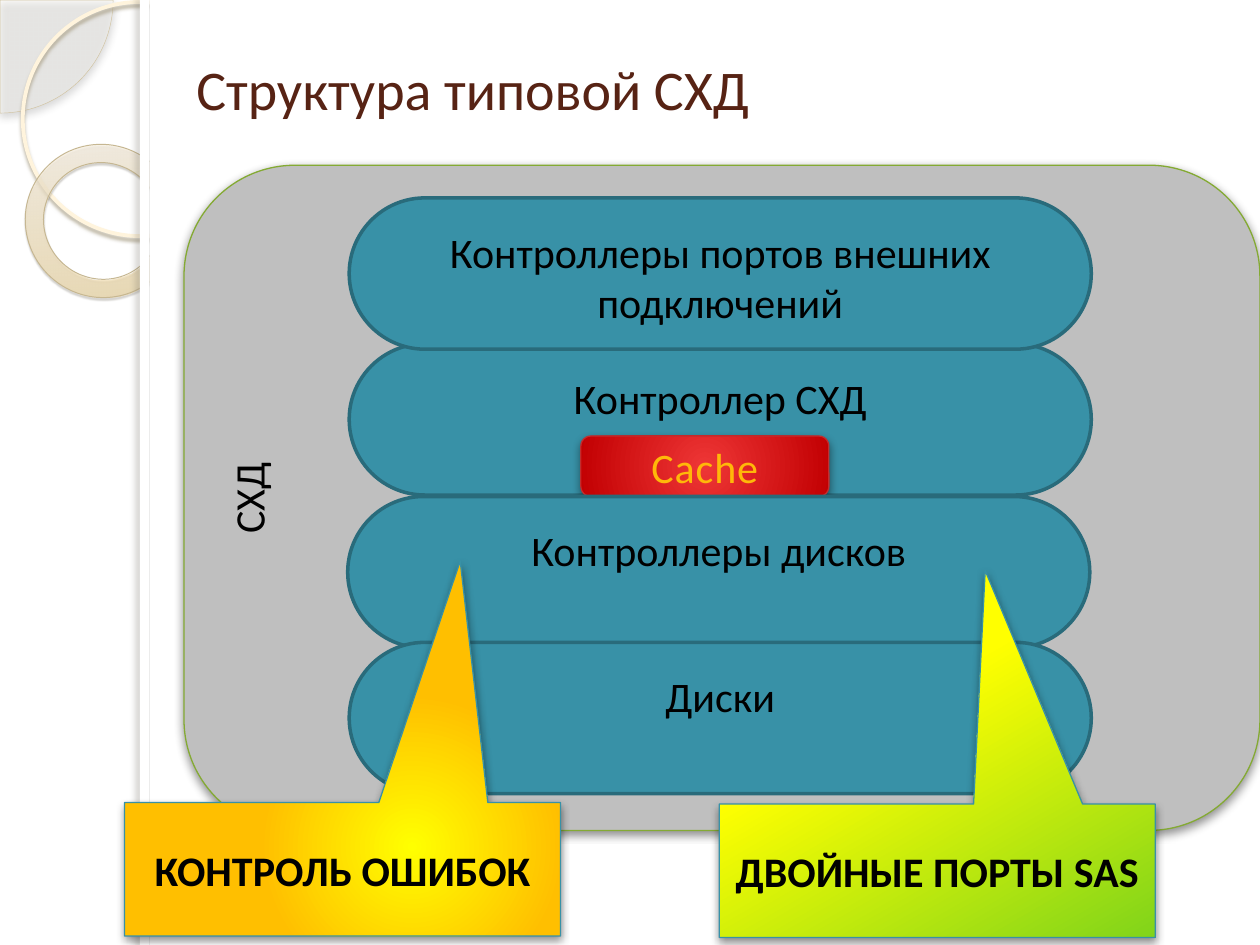
import dataclasses

import pptx
import pptx.dml.color
import pptx.enum.shapes
import pptx.enum.text
import pptx.oxml
import pptx.oxml.ns
import pptx.util

Cm = pptx.util.Cm
Pt = pptx.util.Pt
RGBColor = pptx.dml.color.RGBColor
Shape = pptx.enum.shapes.MSO_SHAPE
Anchor = pptx.enum.text.MSO_ANCHOR
Align = pptx.enum.text.PP_ALIGN
qn = pptx.oxml.ns.qn
parse_xml = pptx.oxml.parse_xml


@dataclasses.dataclass(frozen=True)
class Theme:
    font: str = "Calibri"
    title_size: int = 32
    label_size: int = 24
    title: str = "572314"
    text: str = "000000"
    cache_text: str = "FFB809"
    white: str = "FFFFFF"
    panel: str = "BFBFBF"
    panel_line: str = "84AA33"
    teal: str = "3891A7"
    teal_line: str = "296B7B"
    cache_line: str = "C32D2E"
    pie: str = "FCFAF4"
    pie_line: str = "D1C3A0"
    ring_line: str = "FFF4DD"
    donut_line: str = "C6B792"
    donut: tuple = ((0, "EED18E", 60), (100, "FEFAF6", 70))
    cache: tuple = ((0, "EE3636", 100), (100, "C20002", 100))
    amber: tuple = ((0, "FFFF00", 100), (67, "FFBF00", 100))
    lime: tuple = ((0, "FFFF00", 100), (100, "81D41A", 100))
    shadow: tuple = ("000000", 43, 5, 2, 90)
    ring_shadow: tuple = ("AFA68F", 85, 2, 2, 90)
    donut_shadow: tuple = ("595343", 35, 1, 1.2, 76)
    strip_shadow: tuple = ("736E62", 25, 3, 3, 180)


theme = Theme()
presentation = pptx.Presentation()
presentation.slide_width = Cm(25.4)
presentation.slide_height = Cm(19.05)
slide = presentation.slides.add_slide(presentation.slide_layouts[6])


def add_box(kind, box, fill=None, alpha=100, angle=None, focus=None, line=None,
            width=0.75, shadow=None, adjustments=(), rotation=0):
    shape = slide.shapes.add_shape(kind, *(Cm(length) for length in box))
    shape.rotation = rotation
    for index, value in enumerate(adjustments):
        shape.adjustments[index] = value
    shape.fill.background()
    if line:
        shape.line.color.rgb = RGBColor.from_string(line)
        shape.line.width = Pt(width)
    else:
        shape.line.fill.background()
    shape.shadow.inherit = False
    properties = shape._element.spPr
    namespace = pptx.oxml.ns.nsdecls("a")
    color_xml = '<a:srgbClr val="{}"><a:alpha val="{}"/></a:srgbClr>'
    if fill:
        if isinstance(fill, str):
            xml = f"<a:solidFill {namespace}>{color_xml.format(fill, alpha * 1000)}</a:solidFill>"
        else:
            stops = "".join(
                f'<a:gs pos="{position * 1000}">{color_xml.format(color, opacity * 1000)}</a:gs>'
                for position, color, opacity in fill)
            if focus:
                sides = " ".join(f'{side}="{value * 1000}"' for side, value in zip("ltrb", focus))
                direction = f'<a:path path="circle"><a:fillToRect {sides}/></a:path>'
            else:
                direction = f'<a:lin ang="{angle * 60000}" scaled="0"/>'
            xml = (f'<a:gradFill {namespace} rotWithShape="1"><a:gsLst>{stops}</a:gsLst>'
                   f"{direction}</a:gradFill>")
        properties.replace(properties.find(qn("a:noFill")), parse_xml(xml))
    if shadow:
        color, opacity, blur, distance, bearing = shadow
        properties.find(qn("a:effectLst")).append(parse_xml(
            f'<a:outerShdw {namespace} blurRad="{Pt(blur)}" dist="{Pt(distance)}" '
            f'dir="{bearing * 60000}" algn="ctr" rotWithShape="0">'
            f"{color_xml.format(color, opacity * 1000)}</a:outerShdw>"))
    return shape


def write_text(shape, text, color=theme.text, size=theme.label_size, bold=False,
               anchor=Anchor.TOP, align=Align.CENTER):
    frame = shape.text_frame
    frame.word_wrap = True
    frame.vertical_anchor = anchor
    paragraph = frame.paragraphs[0]
    paragraph.alignment = align
    run = paragraph.add_run()
    run.text = text
    run.font.name = theme.font
    run.font.size = Pt(size)
    run.font.bold = bold
    run.font.color.rgb = RGBColor.from_string(color)
    return run


add_box(Shape.PIE, (-2.27, -2.27, 4.55, 4.55), theme.pie, alpha=33, line=theme.pie_line,
        width=0.25, shadow=theme.shadow, adjustments=(0, 54.02))
add_box(Shape.OVAL, (0.46, 0.04, 4.72, 4.72), line=theme.ring_line, width=2.15,
        shadow=theme.ring_shadow)
add_box(Shape.DONUT, (0.5, 2.92, 3.12, 3.07), theme.donut, angle=225, line=theme.donut_line,
        width=0.57, shadow=theme.donut_shadow, adjustments=(0.12,), rotation=38.6)
add_box(Shape.RECTANGLE, (3.02, 0, 22.38, 19.05), theme.white, shadow=theme.shadow)
add_box(Shape.RECTANGLE, (2.82, 0, 0.2, 19.05), theme.white, shadow=theme.strip_shadow)

title = slide.shapes.add_textbox(Cm(3.71), Cm(0.18), Cm(17.6), Cm(3.18))
write_text(title, "Структура типовой СХД", theme.title, theme.title_size,
           anchor=Anchor.MIDDLE, align=Align.LEFT)

panel = add_box(Shape.ROUNDED_RECTANGLE, (7.85, -0.81, 13.41, 21.69), theme.panel,
                line=theme.panel_line, shadow=theme.shadow, rotation=270)
write_text(panel, "СХД")

layers = (
    ("Контроллер СХД", 7.04, 6.93),
    ("Контроллеры портов внешних подключений", 7.04, 3.99),
    ("Контроллеры дисков", 7.01, 10.01),
    ("Диски", 7.04, 12.95),
)
for index, (label, left, top) in enumerate(layers):
    layer = add_box(Shape.ROUNDED_RECTANGLE, (left, top, 14.96, 3.05), theme.teal,
                    line=theme.teal_line, width=2, adjustments=(0.5,))
    write_text(layer, label)
    if index == 0:
        cache = add_box(Shape.ROUNDED_RECTANGLE, (11.71, 8.79, 5, 1.22), theme.cache,
                        focus=(50, 50, 50, 50), line=theme.cache_line, shadow=theme.shadow)
        cache_run = write_text(cache, "Cache", theme.cache_text, anchor=Anchor.MIDDLE)
        cache_run.font._element.set("spc", "50")

callouts = (
    ("КОНТРОЛЬ ОШИБОК", 2.51, 16.18, (0.27, -2.31), theme.amber, None, (66, 33, 34, 67)),
    ("ДВОЙНЫЕ ПОРТЫ SAS", 14.5, 16.21, (0.11, -2.25), theme.lime, 60, None),
)
for label, left, top, tip, fill, angle, focus in callouts:
    callout = add_box(Shape.RECTANGULAR_CALLOUT, (left, top, 8.79, 2.69), fill, angle=angle,
                      focus=focus, line=theme.teal, shadow=theme.shadow, adjustments=tip)
    write_text(callout, label, bold=True, anchor=Anchor.MIDDLE)

presentation.save("out.pptx")
